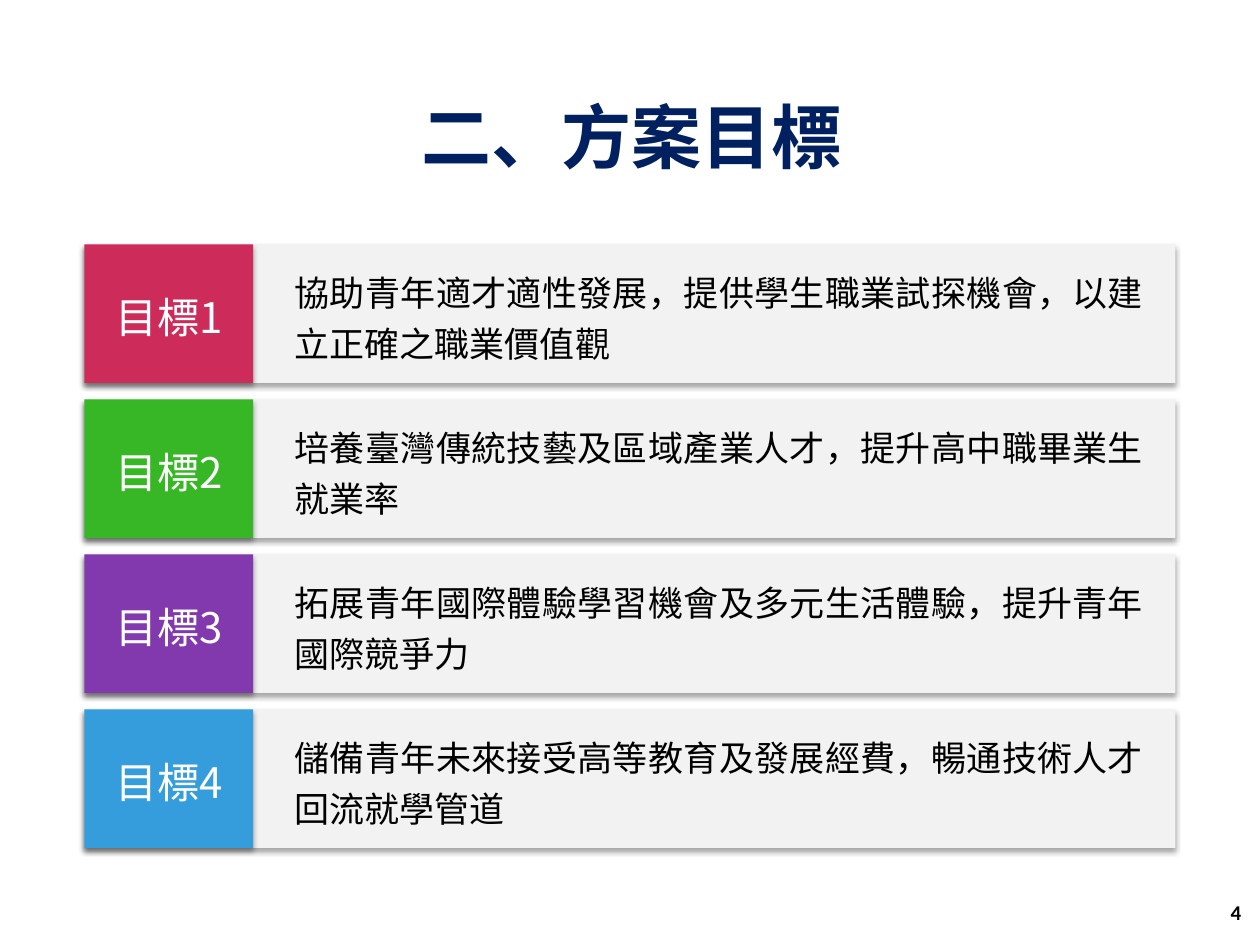
"""Build the slide that lists the four goals of the programme."""
from lxml import etree
from pptx import Presentation
from pptx.dml.color import RGBColor
from pptx.enum import shapes, text
from pptx.oxml import ns
from pptx.util import Inches, Pt

CJK = "Noto Sans CJK SC"
LEFT, TOP, PITCH = 0.67, 1.94, 1.23
ROW_WIDTH, TAG_WIDTH, ROW_HEIGHT = 8.66, 1.34, 1.1
GOALS = [
    ("CD2C5B", "協助青年適才適性發展，提供學生職業試探機會，以建立正確之職業價值觀"),
    ("38B726", "培養臺灣傳統技藝及區域產業人才，提升高中職畢業生就業率"),
    ("8239AD", "拓展青年國際體驗學習機會及多元生活體驗，提升青年國際競爭力"),
    ("359DDC", "儲備青年未來接受高等教育及發展經費，暢通技術人才回流就學管道"),
]


def color(value):
    """Return the colour for a hex string."""
    return RGBColor.from_string(value)


def place(left, top, width, height):
    """Return a position and size in slide units."""
    return [Inches(value) for value in (left, top, width, height)]


def add_shadow(shape):
    """Give a shape a soft shadow below it."""
    shape.shadow.inherit = False
    effects = shape.element.spPr.find(ns.qn("a:effectLst"))
    shadow = etree.SubElement(
        effects, ns.qn("a:outerShdw"), blurRad=str(Pt(3.1)), dist=str(Pt(1.8)),
        dir="5400000", algn="t", rotWithShape="0")
    black = etree.SubElement(shadow, ns.qn("a:srgbClr"), val="000000")
    etree.SubElement(black, ns.qn("a:alpha"), val="35000")


def add_panel(group, area, fill):
    """Add a shadowed rectangle without outline."""
    panel = group.shapes.add_shape(shapes.MSO_SHAPE.RECTANGLE, *place(*area))
    panel.fill.solid()
    panel.fill.fore_color.rgb = color(fill)
    panel.line.fill.background()
    add_shadow(panel)


def write(box, words, size, ink, align, spacing=1.0, bold=False, font=CJK):
    """Write one formatted paragraph, centred vertically in its box."""
    frame = box.text_frame
    frame.word_wrap = True
    frame.auto_size = text.MSO_AUTO_SIZE.NONE
    frame.vertical_anchor = text.MSO_ANCHOR.MIDDLE
    para = frame.paragraphs[0]
    para.alignment = align
    para.line_spacing = spacing
    span = para.add_run()
    span.text = words
    span.font.size = Pt(size)
    span.font.bold = bold
    span.font.color.rgb = color(ink)
    span.font.name = font
    etree.SubElement(span.font._element, ns.qn("a:ea"), typeface=font)


def add_goal(page, index, fill, words):
    """Add one goal row: grey panel, coloured tag and both texts."""
    top = TOP + index * PITCH
    group = page.shapes.add_group_shape()
    add_panel(group, (LEFT, top, ROW_WIDTH, ROW_HEIGHT), "F2F2F2")
    add_panel(group, (LEFT, top, TAG_WIDTH, ROW_HEIGHT), fill)
    body = group.shapes.add_textbox(*place(2.24, top + 0.08, 6.93, 0.94))
    write(body, words, 20, "000000", text.PP_ALIGN.JUSTIFY, spacing=1.2)
    tag = group.shapes.add_textbox(*place(LEFT, top + 0.28, TAG_WIDTH, 0.55))
    write(tag, f"目標{index + 1}", 24, "FFFFFF", text.PP_ALIGN.CENTER, spacing=1.1)


def main():
    """Build and save the deck."""
    deck = Presentation()
    deck.slide_width, deck.slide_height = Inches(10), Inches(7.5)
    page = deck.slides.add_slide(deck.slide_layouts[5])
    title = page.shapes.title
    title.left, title.top, title.width, title.height = place(0.64, 0.76, 8.74, 0.63)
    write(title, "二、方案目標", 40, "002060", text.PP_ALIGN.CENTER, bold=True)
    for index, (fill, words) in enumerate(GOALS):
        add_goal(page, index, fill, words)
    number = page.shapes.add_textbox(*place(7.62, 7.04, 2.33, 0.4))
    write(number, "4", 12, "000000", text.PP_ALIGN.RIGHT, bold=True, font="Calibri")
    deck.save("out.pptx")


if __name__ == "__main__":
    main()
